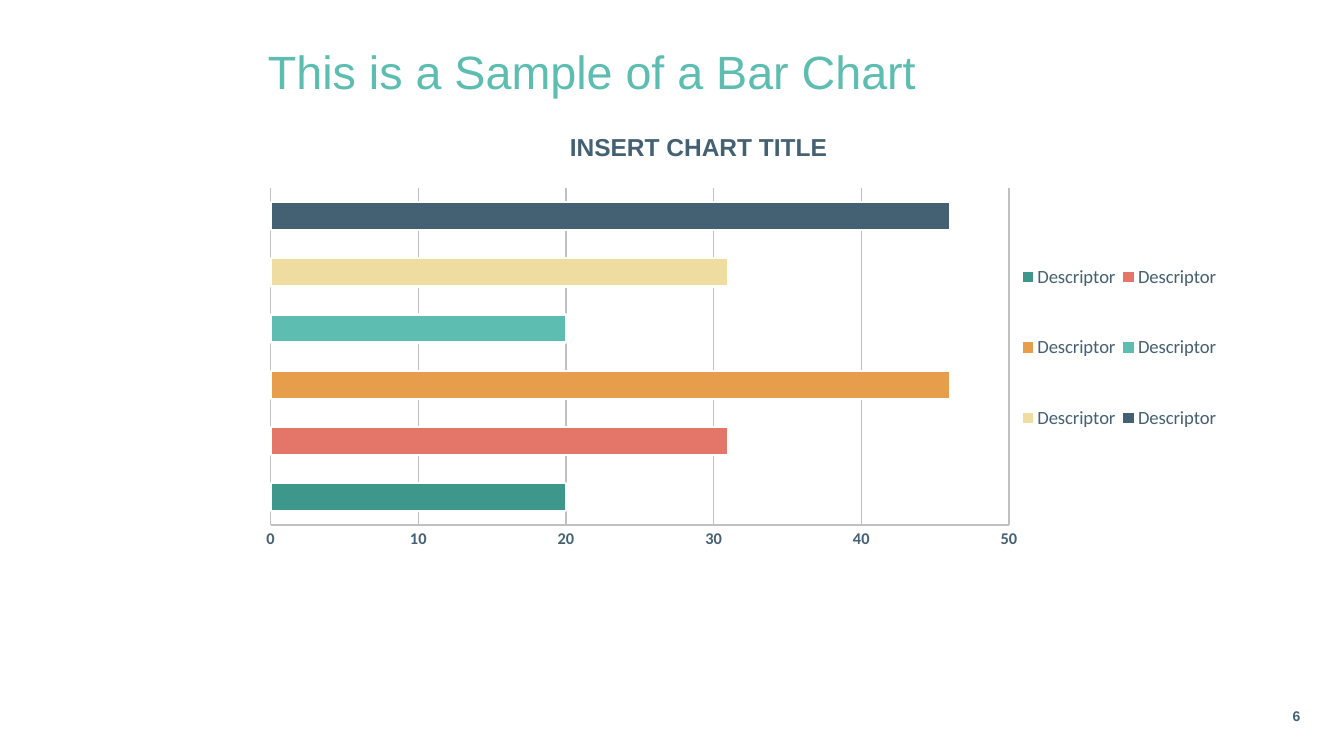
from lxml import etree
from pptx import Presentation
from pptx.chart.data import CategoryChartData
from pptx.dml.color import RGBColor
from pptx.enum.chart import XL_CHART_TYPE, XL_LEGEND_POSITION, XL_TICK_LABEL_POSITION, XL_TICK_MARK
from pptx.enum.text import MSO_ANCHOR, PP_ALIGN
from pptx.oxml.ns import qn
from pptx.util import Inches, Pt

COLORS = {
    "teal": "3E978B", "coral": "E37668", "orange": "E79E4C",
    "mint": "5EBDB1", "sand": "EEDCA0", "slate": "446073",
    "axis": "C0C0C0", "white": "FFFFFF",
}
BARS = [("teal", 20), ("coral", 31), ("orange", 46),
        ("mint", 20), ("sand", 31), ("slate", 46)]


def rgb(name):
    return RGBColor.from_string(COLORS[name])


def style_font(font, size, color, bold=False, name="Arial"):
    font.name = name
    font.size = Pt(size)
    font.bold = bold
    font.color.rgb = rgb(color)


def style_line(line, color, width):
    line.color.rgb = rgb(color)
    line.width = Pt(width)


def write_text(sp, box, text, size, color, bold=False, align=PP_ALIGN.LEFT,
               anchor=MSO_ANCHOR.TOP, insets=(0, 0)):
    sp.left, sp.top, sp.width, sp.height = (Inches(v) for v in box)
    tf = sp.text_frame
    tf.word_wrap = True
    tf.vertical_anchor = anchor
    tf.margin_left = tf.margin_right = Inches(insets[0])
    tf.margin_top = tf.margin_bottom = Inches(insets[1])
    p = tf.paragraphs[0]
    p.text = text
    p.alignment = align
    style_font(p.font, size, color, bold)


def set_layout(element, index, box, inner=False):
    """Place a chart part at box, given as fractions of the chart."""
    for old in element.findall(qn("c:layout")):
        element.remove(old)
    layout = etree.Element(qn("c:layout"))
    manual = etree.SubElement(layout, qn("c:manualLayout"))
    settings = [("layoutTarget", "inner")] if inner else []
    settings += [("xMode", "edge"), ("yMode", "edge")]
    settings += zip("xywh", box)
    for tag, value in settings:
        etree.SubElement(manual, qn(f"c:{tag}")).set("val", str(value))
    element.insert(index, layout)


def style_axes(chart):
    cat, val = chart.category_axis, chart.value_axis
    for axis, width in ((cat, 1), (val, 2)):
        axis.major_tick_mark = axis.minor_tick_mark = XL_TICK_MARK.NONE
        style_line(axis.format.line, "axis", width)
    cat.tick_label_position = XL_TICK_LABEL_POSITION.NONE
    val.minimum_scale, val.maximum_scale, val.major_unit = 0, 50, 10
    style_line(val.major_gridlines.format.line, "axis", 1)
    style_font(val.tick_labels.font, 14, "slate", True, "Calibri")


def add_bar_chart(slide, box):
    data = CategoryChartData()
    data.categories = ["Descriptor"] * len(BARS)
    data.add_series("Item", [value for _, value in BARS])
    chart = slide.shapes.add_chart(
        XL_CHART_TYPE.BAR_CLUSTERED, *(Inches(v) for v in box), data).chart
    chart.has_title = False
    style_font(chart.font, 18, "slate", True, "Calibri")
    style_axes(chart)

    plot = chart.plots[0]
    plot.gap_width = 100
    plot.vary_by_categories = True
    series = plot.series[0]
    for i, (color, _) in enumerate(BARS):
        fmt = series.points[i].format
        fmt.fill.solid()
        fmt.fill.fore_color.rgb = rgb(color)
        style_line(fmt.line, "white", 2)

    chart.has_legend = True
    legend = chart.legend
    legend.position = XL_LEGEND_POSITION.RIGHT
    legend.include_in_layout = False
    style_font(legend.font, 16, "slate", False, "Calibri")

    plot_area = chart.element.find(f".//{qn('c:plotArea')}")
    set_layout(plot_area, 0, (0.074, 0.091, 0.636, 0.717), inner=True)
    set_layout(chart.element.find(f".//{qn('c:legend')}"), 1, (0.715, 0.155, 0.18, 0.55))


def build_chart_slide(prs):
    slide = prs.slides.add_slide(prs.slide_layouts[5])
    add_bar_chart(slide, (2.2, 1.73, 13.82, 5.6))
    write_text(slide.shapes.add_textbox(0, 0, 0, 0), (3.3, 1.5, 10.03, 0.49),
               "INSERT CHART TITLE", 21, "slate", True, PP_ALIGN.CENTER,
               MSO_ANCHOR.BOTTOM, (0.14, 0.07))
    write_text(slide.shapes.title, (3.19, 0.51, 12.31, 1.6),
               "This is a Sample of a Bar Chart", 40, "mint")
    write_text(slide.shapes.add_textbox(0, 0, 0, 0), (14.88, 8.42, 0.6, 0.26),
               "6", 12, "slate", True, PP_ALIGN.RIGHT)


def main():
    prs = Presentation()
    prs.slide_width, prs.slide_height = Inches(16), Inches(9)
    build_chart_slide(prs)
    prs.save("out.pptx")


if __name__ == "__main__":
    main()
